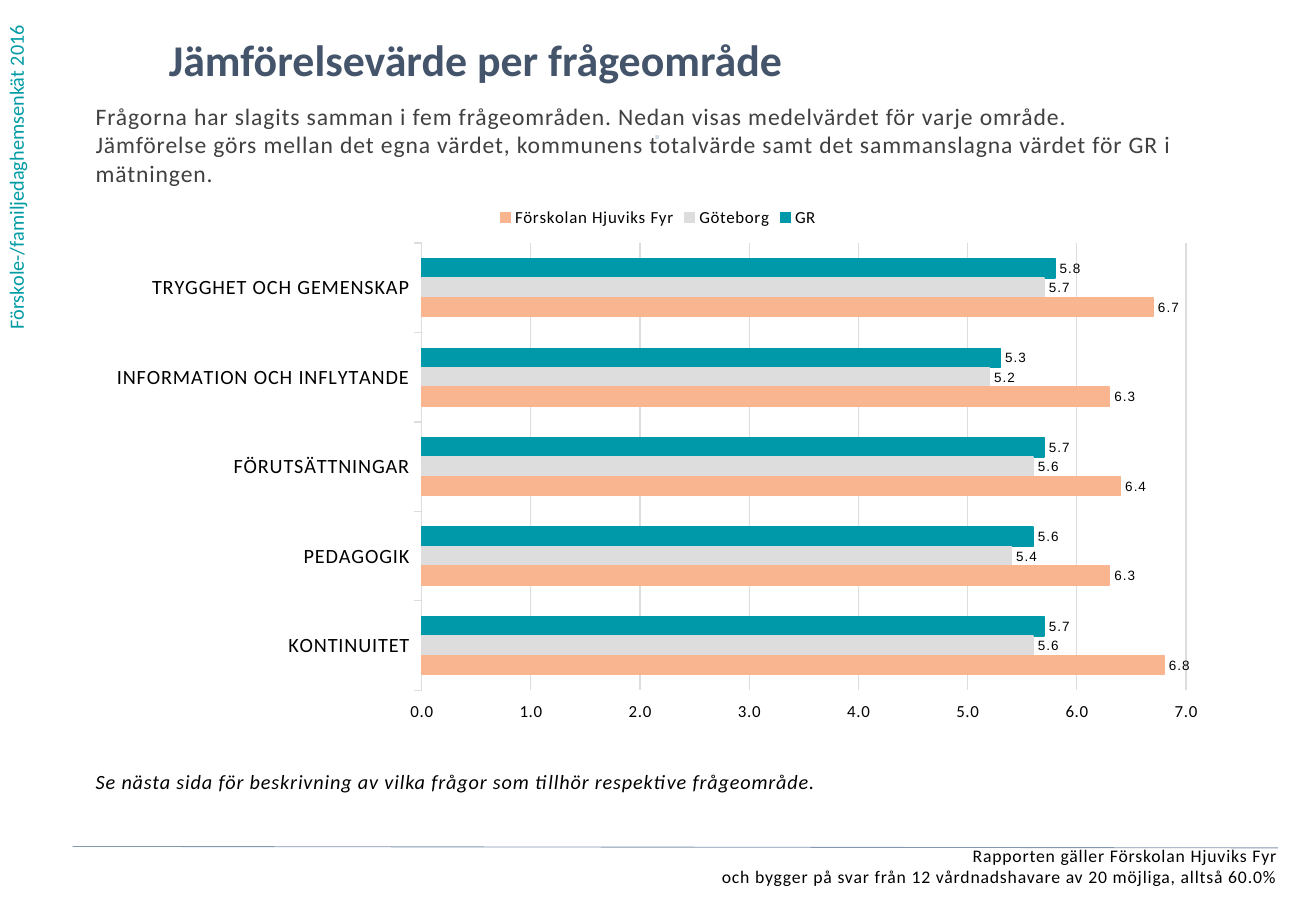
from lxml import etree
from pptx import Presentation
from pptx import util as u
from pptx.chart.data import CategoryChartData
from pptx.dml.color import RGBColor
from pptx.enum import chart as ch, shapes, text
from pptx.oxml import parse_xml
from pptx.oxml.ns import nsdecls, qn

TEAL = RGBColor(0x00, 0x9B, 0xA4)
NAVY = RGBColor(0x44, 0x54, 0x6A)
GRAY = RGBColor(0x40, 0x40, 0x40)
BLACK = RGBColor(0x00, 0x00, 0x00)
PALE = RGBColor(0xD2, 0xD9, 0xE2)
RULE = RGBColor(0x84, 0x97, 0xB0)
GRID = RGBColor(0xDD, 0xDD, 0xDD)
SEA = RGBColor(0x00, 0x99, 0xAA)
PEACH = RGBColor(0xF9, 0xB5, 0x90)

FONT = "Calibri"
FORM = "0.0;0.0"
AREAS = ["TRYGGHET OCH GEMENSKAP", "INFORMATION OCH INFLYTANDE",
         "FÖRUTSÄTTNINGAR", "PEDAGOGIK", "KONTINUITET"]
SERIES = [
    ("GR", SEA, [5.8, 5.3, 5.7, 5.6, 5.7]),
    ("Göteborg", GRID, [5.7, 5.2, 5.6, 5.4, 5.6]),
    ("Förskolan Hjuviks Fyr", PEACH, [6.7, 6.3, 6.4, 6.3, 6.8]),
]
# Share of the chart area taken by the plot
PLOT = {"x": 0.29, "y": 0.09, "w": 0.68, "h": 0.83}


def add_text(slide, words, box, size, color=BLACK, bold=False, italic=False,
             align=text.PP_ALIGN.LEFT, gap=0, turn=None):
    """Add a text box with one paragraph per line of words."""
    shape = slide.shapes.add_textbox(*[u.Cm(n) for n in box])
    frame = shape.text_frame
    frame.word_wrap = True
    if turn:
        frame._txBody.bodyPr.set("vert", turn)
    else:
        frame.margin_left = frame.margin_right = 0
        frame.margin_top = frame.margin_bottom = 0
    frame.text = words
    for para in frame.paragraphs:
        para.alignment = align
        for run in para.runs:
            font = run.font
            font.name, font.size = FONT, u.Pt(size)
            font.bold, font.italic = bold, italic
            font.color.rgb = color
            if gap:
                run._r.get_or_add_rPr().set("spc", str(gap))


def add_rule(slide, start, end):
    line = slide.shapes.add_connector(
        shapes.MSO_CONNECTOR.STRAIGHT, *[u.Cm(n) for n in start + end])
    line.line.color.rgb = RULE
    line.line.width = u.Pt(0.5)
    etree.SubElement(line._element.spPr, qn("a:effectLst"))


def set_font(font, size, name=FONT):
    font.name, font.size = name, u.Pt(size)
    font.color.rgb = BLACK


def set_line(line, color):
    line.color.rgb = color
    line.width = u.Pt(0.75)


def style_axes(chart):
    cats, vals = chart.category_axis, chart.value_axis
    cats.reverse_order = True
    set_line(cats.format.line, GRID)
    vals.minimum_scale, vals.maximum_scale, vals.major_unit = 0, 7, 1
    vals.tick_label_position = ch.XL_TICK_LABEL_POSITION.HIGH
    vals.format.line.fill.background()
    set_line(vals.major_gridlines.format.line, GRID)
    vals.tick_labels.number_format = FORM
    vals.tick_labels.number_format_is_linked = False
    for axis, size in ((cats, 12), (vals, 10)):
        axis.major_tick_mark = ch.XL_TICK_MARK.OUTSIDE
        set_font(axis.tick_labels.font, size)


def style_bars(plot):
    plot.gap_width, plot.overlap = 162, 0
    plot.vary_by_categories = False
    for bars, (_, color, _) in zip(plot.series, SERIES):
        bars.format.fill.solid()
        bars.format.fill.fore_color.rgb = color
        set_line(bars.format.line, color)
        labels = bars.data_labels
        labels.show_value = True
        labels.number_format = FORM
        labels.number_format_is_linked = False
        labels.position = ch.XL_LABEL_POSITION.OUTSIDE_END
        set_font(labels.font, 8, "Arial")


def place_plot(chart):
    """Fix the inner plot area and space out the letters."""
    area = chart.element.find(".//" + qn("c:plotArea"))
    old = area.find(qn("c:layout"))
    if old is not None:
        area.remove(old)
    modes = '<c:xMode val="edge"/><c:yMode val="edge"/>'
    sides = "".join(f'<c:{k} val="{v}"/>' for k, v in PLOT.items())
    area.insert(0, parse_xml(
        f'<c:layout {nsdecls("c")}><c:manualLayout>'
        f'<c:layoutTarget val="inner"/>{modes}{sides}'
        '</c:manualLayout></c:layout>'))
    for props in chart.element.iter(qn("a:defRPr")):
        props.set("spc", "50")


def add_bars(slide, box):
    data = CategoryChartData(number_format="0.0")
    data.categories = AREAS
    for name, _, vals in SERIES:
        data.add_series(name, vals)
    chart = slide.shapes.add_chart(
        ch.XL_CHART_TYPE.BAR_CLUSTERED, *[u.Cm(n) for n in box], data).chart
    chart.has_title = False
    set_font(chart.font, 10)
    chart.has_legend = True
    chart.legend.position = ch.XL_LEGEND_POSITION.TOP
    chart.legend.include_in_layout = False
    set_font(chart.legend.font, 10)
    style_axes(chart)
    style_bars(chart.plots[0])
    place_plot(chart)


def main():
    deck = Presentation()
    deck.slide_width, deck.slide_height = u.Cm(27.51), u.Cm(19.05)
    slide = deck.slides.add_slide(deck.slide_layouts[6])

    # Side label and heading
    add_text(slide, "Förskole-/familjedaghemsenkät 2016",
             (-0.05, 0, 1.02, 7.14), 12, TEAL, turn="vert270")
    add_text(slide, "Jämförelsevärde per frågeområde",
             (3.53, 0.69, 21.18, 1.45), 26, NAVY, bold=True)

    # Introduction
    add_text(slide,
             "Frågorna har slagits samman i fem frågeområden. "
             "Nedan visas medelvärdet för varje område.\n"
             "Jämförelse görs mellan det egna värdet, kommunens totalvärde "
             "samt det sammanslagna värdet för GR i mätningen.",
             (2, 2.13, 24.03, 2.57), 14, GRAY, gap=50)
    add_text(slide, "⋅", (9.83, 2.59, 7.82, 0.99), 12, PALE, bold=True,
             align=text.PP_ALIGN.CENTER, gap=50)

    # Chart and note
    add_bars(slide, (2, 4.07, 23.5, 11.27))
    add_text(slide, "Se nästa sida för beskrivning av vilka frågor som "
             "tillhör respektive frågeområde.",
             (2, 16.08, 23.5, 0.6), 12, italic=True, gap=50)

    # Footer
    add_rule(slide, (1.52, 17.7), (26.72, 17.73))
    add_text(slide, "Rapporten gäller Förskolan Hjuviks Fyr\n"
             "och bygger på svar från 12 vårdnadshavare av 20 möjliga, "
             "alltså 60.0%",
             (0.3, 17.66, 26.4, 1.09), 10.5,
             align=text.PP_ALIGN.RIGHT, gap=50)

    deck.save("out.pptx")


if __name__ == "__main__":
    main()
